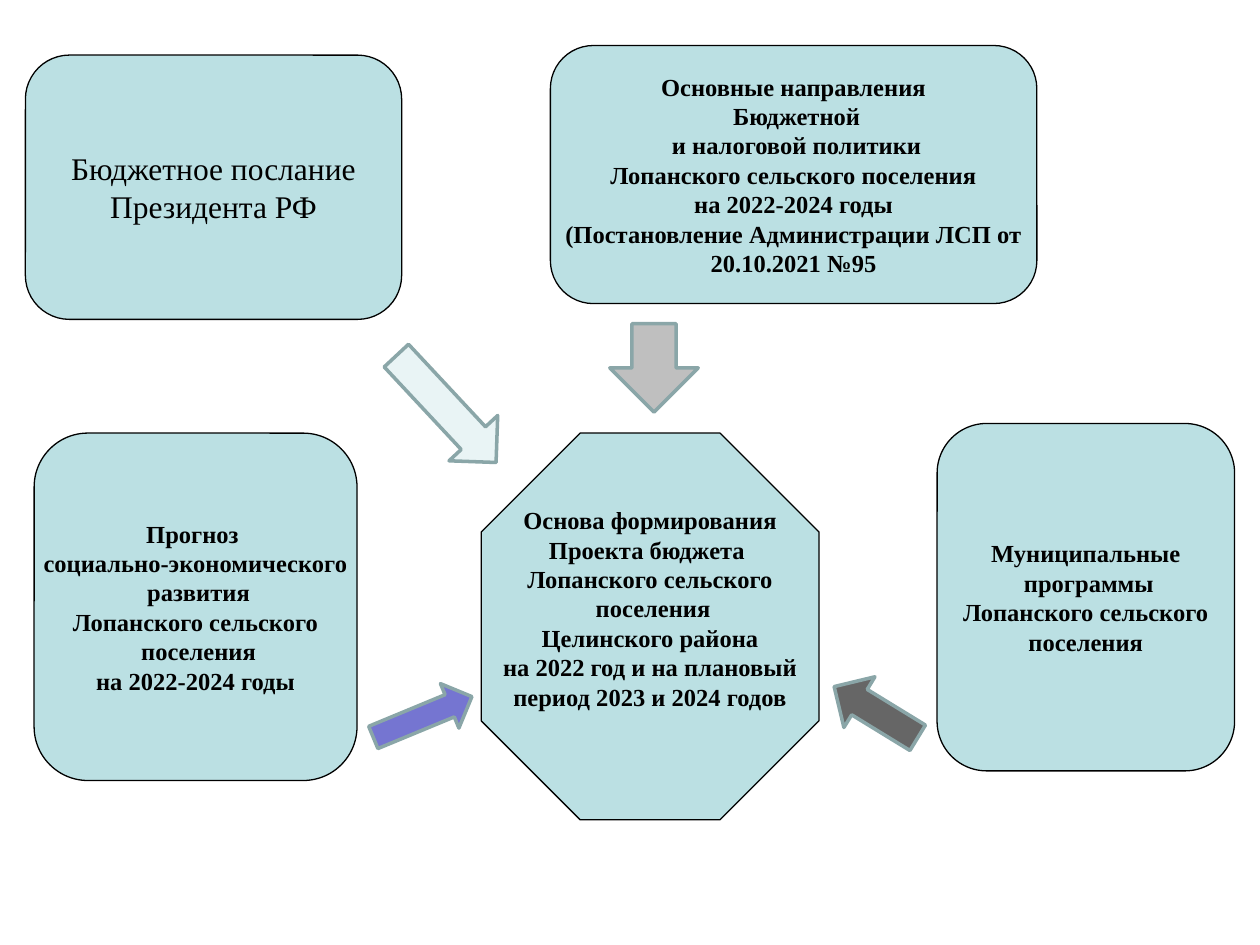
from dataclasses import dataclass

from pptx import Presentation
from pptx.dml.color import RGBColor
from pptx.enum.shapes import MSO_SHAPE
from pptx.enum.text import MSO_ANCHOR, PP_ALIGN
from pptx.util import Pt

BLACK = RGBColor(0x00, 0x00, 0x00)
AQUA = RGBColor(0xBB, 0xE0, 0xE3)
EDGE = RGBColor(0x8A, 0xA6, 0xA8)
VIOLET = RGBColor(0x75, 0x75, 0xD1)
PALE = RGBColor(0xE9, 0xF4, 0xF5)
SILVER = RGBColor(0xBF, 0xBF, 0xBF)
GREY = RGBColor(0x66, 0x66, 0x66)
FONT = "Times New Roman"


@dataclass
class Arrow:
    kind: MSO_SHAPE
    area: tuple
    fill: RGBColor
    turn: float = 0


@dataclass
class Box:
    kind: MSO_SHAPE
    area: tuple
    lines: list
    size: float = 14
    bold: bool = True
    foot: float = 3.6  # bottom inset; a larger one lifts the text


ARROWS = [
    Arrow(MSO_SHAPE.RIGHT_ARROW, (211, 396, 61, 27.5), VIOLET, 337.5),
    Arrow(MSO_SHAPE.DOWN_ARROW, (236, 192, 38, 83.5), PALE, 317),
    Arrow(MSO_SHAPE.DOWN_ARROW, (348.5, 185, 50.5, 50.5), SILVER),
    Arrow(MSO_SHAPE.LEFT_ARROW, (472.5, 390, 56, 34), GREY, 31.5),
]

BOXES = [
    Box(MSO_SHAPE.FLOWCHART_ALTERNATE_PROCESS, (314.5, 26, 278, 147.5), [
        "Основные направления",
        " Бюджетной",
        " и налоговой политики",
        "Лопанского сельского поселения",
        "на 2022-2024 годы",
        "(Постановление Администрации ЛСП от",
        "20.10.2021 №95",
    ]),
    Box(MSO_SHAPE.OCTAGON, (275, 247.5, 193, 221), [
        "Основа формирования",
        "Проекта бюджета ",
        "Лопанского сельского",
        " поселения",
        "Целинского района",
        "на 2022 год и на плановый",
        "период 2023 и 2024 годов",
    ], foot=24.5),
    Box(MSO_SHAPE.ROUNDED_RECTANGLE, (14.5, 31.5, 215, 151), [
        "Бюджетное послание",
        "Президента РФ",
    ], size=18, bold=False),
    Box(MSO_SHAPE.ROUNDED_RECTANGLE, (19.5, 247.5, 184.5, 198.5), [
        "Прогноз ",
        "социально-экономического",
        " развития",
        "Лопанского сельского",
        " поселения",
        "на 2022-2024 годы",
    ]),
    Box(MSO_SHAPE.ROUNDED_RECTANGLE, (535.5, 242, 170, 198.5), [
        "Муниципальные",
        " программы",
        "Лопанского сельского",
        "поселения",
    ]),
]


def add_form(slide, kind: MSO_SHAPE, area: tuple, fill: RGBColor,
             edge: RGBColor, width: float):
    form = slide.shapes.add_shape(kind, *map(Pt, area))
    form.shadow.inherit = False
    form.fill.solid()
    form.fill.fore_color.rgb = fill
    form.line.color.rgb = edge
    form.line.width = Pt(width)
    return form


def draw_arrow(slide, arrow: Arrow) -> None:
    form = add_form(slide, arrow.kind, arrow.area, arrow.fill, EDGE, 2)
    form.rotation = arrow.turn


def draw_box(slide, box: Box) -> None:
    form = add_form(slide, box.kind, box.area, AQUA, BLACK, 0.75)
    frame = form.text_frame
    frame.word_wrap = False
    frame.vertical_anchor = MSO_ANCHOR.MIDDLE
    frame.margin_bottom = Pt(box.foot)
    for i, line in enumerate(box.lines):
        para = frame.add_paragraph() if i else frame.paragraphs[0]
        para.alignment = PP_ALIGN.CENTER
        run = para.add_run()
        run.text = line
        run.font.name = FONT
        run.font.size = Pt(box.size)
        run.font.bold = box.bold
        run.font.color.rgb = BLACK


def main() -> None:
    deck = Presentation()
    deck.slide_width, deck.slide_height = Pt(720), Pt(540)
    slide = deck.slides.add_slide(deck.slide_layouts[6])
    for arrow in ARROWS:
        draw_arrow(slide, arrow)
    for box in BOXES:
        draw_box(slide, box)
    deck.save("out.pptx")


if __name__ == "__main__":
    main()
